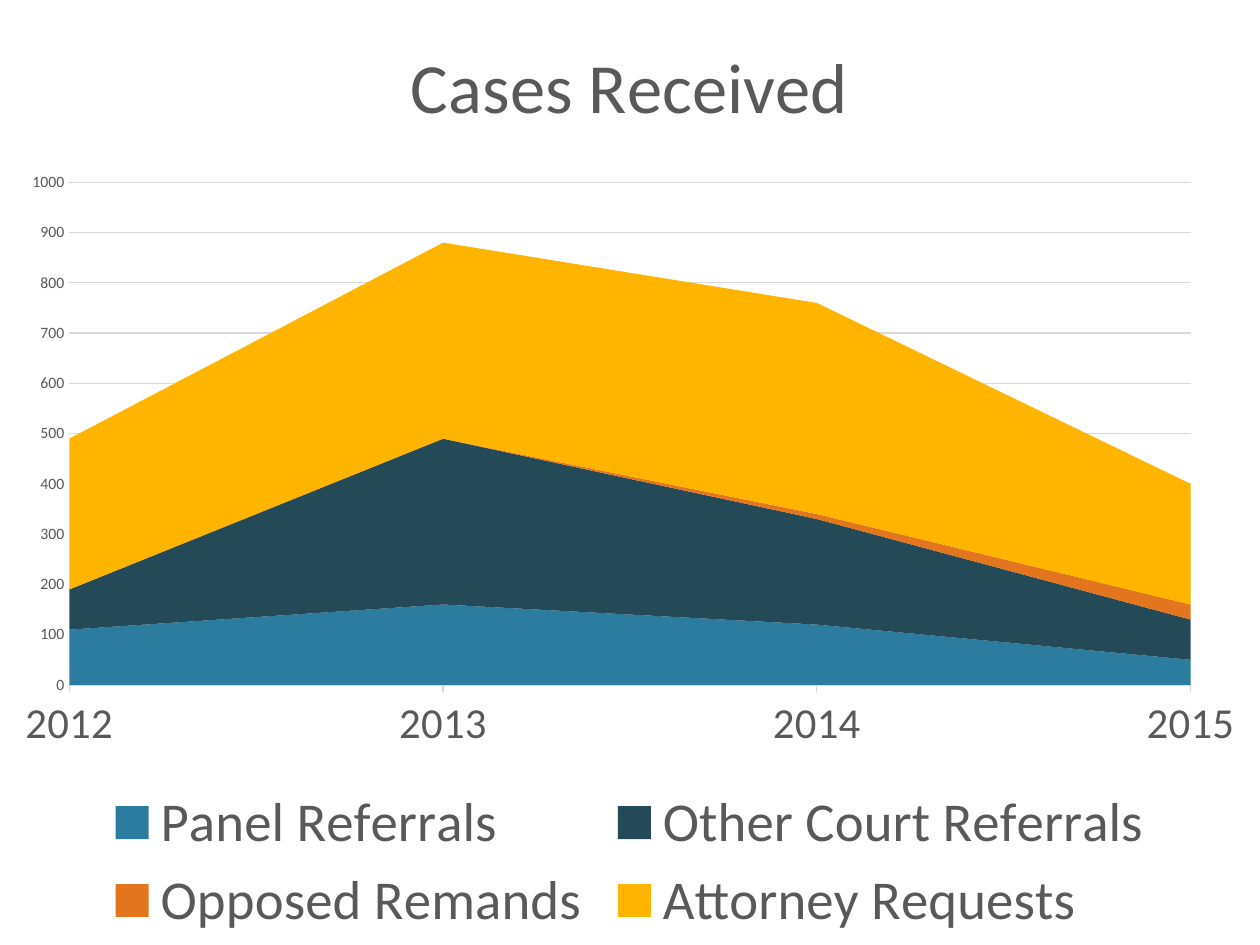
from dataclasses import dataclass
from typing import Optional

from lxml.etree import SubElement
from pptx import Presentation
from pptx.chart.chart import Chart
from pptx.chart.data import CategoryChartData
from pptx.dml.color import RGBColor
from pptx.dml.line import LineFormat
from pptx.enum.chart import XL_CHART_TYPE, XL_LEGEND_POSITION, XL_TICK_MARK
from pptx.oxml.ns import qn
from pptx.text.text import Font
from pptx.util import Inches, Pt

BLUE = RGBColor(0x2C, 0x7C, 0x9F)
NAVY = RGBColor(0x24, 0x4A, 0x58)
ORANGE = RGBColor(0xE2, 0x75, 0x1D)
YELLOW = RGBColor(0xFF, 0xB4, 0x00)
GRAY = RGBColor(0x59, 0x59, 0x59)
GRID = RGBColor(0xD9, 0xD9, 0xD9)


@dataclass(frozen=True)
class CaseType:
    name: str
    counts: tuple[Optional[int], ...]
    color: RGBColor


YEARS = ("2012", "2013", "2014", "2015")
CASE_TYPES = (
    CaseType("Panel Referrals", (110, 160, 120, 50), BLUE),
    CaseType("Other Court Referrals", (80, 330, 210, 80), NAVY),
    CaseType("Opposed Remands", (None, None, 10, 30), ORANGE),
    CaseType("Attorney Requests", (300, 390, 420, 240), YELLOW),
)
PLOT_LAYOUT = {
    "layoutTarget": "inner", "xMode": "edge", "yMode": "edge",
    "x": "0.055", "y": "0.193", "w": "0.89", "h": "0.532",
}


def style_font(font: Font, size: float) -> None:
    for attribute, value in {"name": "Calibri", "size": Pt(size), "bold": False}.items():
        setattr(font, attribute, value)
    font.color.rgb = GRAY


def style_line(line: LineFormat) -> None:
    line.color.rgb = GRID
    line.width = Pt(0.75)


def place_plot(chart: Chart) -> None:
    plot_area = chart.element.find(f".//{qn('c:plotArea')}")
    for old_layout in plot_area.findall(qn("c:layout")):
        plot_area.remove(old_layout)
    layout = SubElement(plot_area, qn("c:layout"))
    plot_area.insert(0, layout)
    manual = SubElement(layout, qn("c:manualLayout"))
    for tag, value in PLOT_LAYOUT.items():
        SubElement(manual, qn(f"c:{tag}")).set("val", value)


def style_axes(chart: Chart) -> None:
    years, counts = chart.category_axis, chart.value_axis
    formats = {
        years: {"major_tick_mark": XL_TICK_MARK.OUTSIDE, "has_major_gridlines": False},
        counts: {
            "major_tick_mark": XL_TICK_MARK.NONE, "has_major_gridlines": True,
            "minimum_scale": 0, "maximum_scale": 1000, "major_unit": 100,
        },
    }
    for axis, values in formats.items():
        axis.minor_tick_mark = XL_TICK_MARK.NONE
        for attribute, value in values.items():
            setattr(axis, attribute, value)
    style_font(years.tick_labels.font, 24.4)
    style_font(counts.tick_labels.font, 9)
    style_line(years.format.line)
    style_line(counts.major_gridlines.format.line)
    counts.format.line.fill.background()


def main() -> None:
    """Build the slide with the stacked area chart of cases received."""
    presentation = Presentation()
    presentation.slide_width, presentation.slide_height = Inches(10), Inches(7.5)
    slide = presentation.slides.add_slide(presentation.slide_layouts[6])

    case_data = CategoryChartData()
    case_data.categories = YEARS
    for case_type in CASE_TYPES:
        case_data.add_series(case_type.name, case_type.counts)
    chart = slide.shapes.add_chart(
        XL_CHART_TYPE.AREA_STACKED, Inches(0), Inches(0), Inches(10), Inches(7.5), case_data
    ).chart
    style_font(chart.font, 10)

    chart.has_title = True
    heading = chart.chart_title.text_frame
    heading.text = "Cases Received"
    style_font(heading.paragraphs[0].runs[0].font, 40.3)
    chart.chart_title.include_in_layout = False

    chart.has_legend = True
    chart.legend.position = XL_LEGEND_POSITION.BOTTOM
    chart.legend.include_in_layout = False
    style_font(chart.legend.font, 31.3)

    chart.plots[0].vary_by_categories = False
    for series, case_type in zip(chart.plots[0].series, CASE_TYPES):
        series.format.fill.solid()
        series.format.fill.fore_color.rgb = case_type.color
        series.format.line.fill.background()
    style_axes(chart)
    place_plot(chart)
    presentation.save("out.pptx")


if __name__ == "__main__":
    main()
